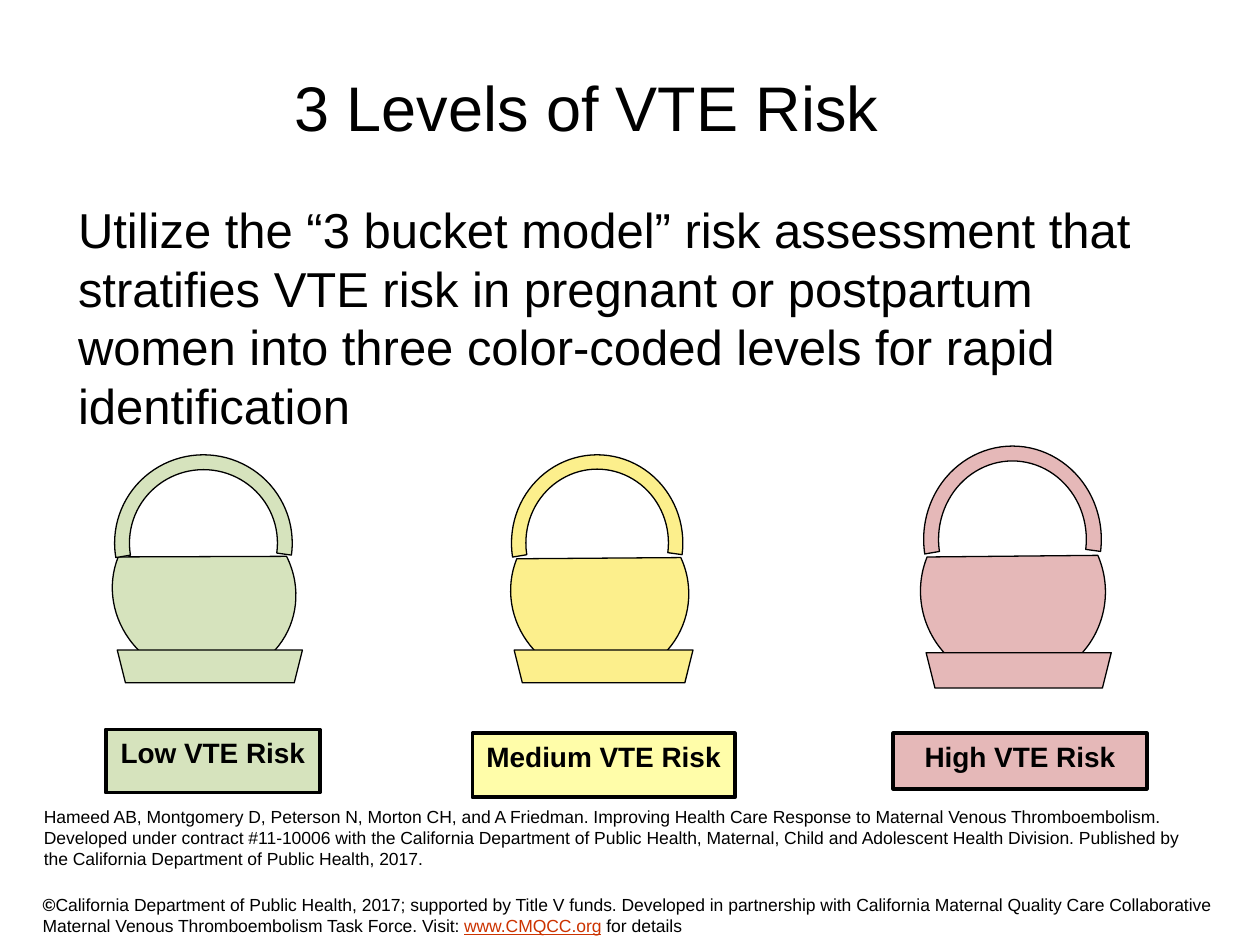
from lxml.etree import SubElement
from pptx import Presentation
from pptx.dml.color import RGBColor
from pptx.enum.shapes import MSO_SHAPE
from pptx.enum.text import MSO_ANCHOR, MSO_AUTO_SIZE, PP_ALIGN
from pptx.oxml.ns import qn
from pptx.util import Pt

COLORS = {
    "text": "000000",
    "link": "CC3300",
    "low": "D6E3BD",
    "medium": "FCEF8C",
    "medium_label": "FFFDA9",
    "high": "E5B8B8",
}
HANDLE_ADJUSTMENTS = (102.323, 4.698, 0.084)

# Each place is left, top, width, height in points.
RISK_LEVELS = [
    {"name": "Low VTE Risk", "color": "low", "label_color": "low",
     "bowl": (67, 285.1, 99.4, 105.8), "handle": (65.5, 259.9, 101.5, 100.8),
     "base": (67, 371.5, 105.8, 18.7), "label": (60.5, 416.9, 122.4, 36)},
    {"name": "Medium VTE Risk", "color": "medium", "label_color": "medium_label",
     "bowl": (293, 287.3, 99.4, 102.2), "handle": (292.3, 259.9, 97.9, 100.8),
     "base": (293.8, 371.5, 102.2, 18.7), "label": (270, 419, 149.8, 36.7)},
    {"name": "High VTE Risk", "color": "high", "label_color": "high",
     "bowl": (526.3, 285.1, 105.1, 105.8), "handle": (527.8, 254.9, 101.5, 106.6),
     "base": (529.2, 373, 105.8, 20.2), "label": (510.5, 419, 144.7, 31.7)},
]

CITATION = (
    "Hameed AB, Montgomery D, Peterson N, Morton CH, and A Friedman. Improving Health Care "
    "Response to Maternal Venous Thromboembolism. Developed under contract #11-10006 with the "
    "California Department of Public Health, Maternal, Child and Adolescent Health Division. "
    "Published by the California Department of Public Health, 2017."
)
COPYRIGHT = (
    "California Department of Public Health, 2017; supported by Title V funds. Developed in "
    "partnership with California Maternal Quality Care Collaborative Maternal Venous "
    "Thromboembolism Task Force. Visit: "
)
STATEMENT = (
    "Utilize the “3 bucket model” risk assessment that stratifies VTE risk in pregnant or "
    "postpartum women into three color-coded levels for rapid identification"
)


def rgb(name):
    return RGBColor.from_string(COLORS[name])


def add_span(para, text, size, color="text", bold=False, underline=False):
    span = para.add_run()
    span.text = text
    font = span.font
    font.name, font.size = "Arial", Pt(size)
    font.bold, font.underline = bold, underline
    font.color.rgb = rgb(color)


def fill_placeholder(holder, place, text, size, align, anchor):
    holder.left, holder.top, holder.width, holder.height = map(Pt, place)
    frame = holder.text_frame
    frame.auto_size = MSO_AUTO_SIZE.NONE
    frame.vertical_anchor = anchor
    para = frame.paragraphs[0]
    para.alignment = align
    para.space_before = Pt(0)
    add_span(para, text, size)
    return para


def remove_bullet(para):
    properties = para._p.get_or_add_pPr()
    properties.set("marL", "0")
    properties.set("indent", "0")
    SubElement(properties, qn("a:buNone"))


def add_note(page, place, spans):
    """Add a small wrapped text box; spans are (text, format) pairs."""
    box = page.shapes.add_textbox(*map(Pt, place))
    box.text_frame.word_wrap = True
    para = box.text_frame.paragraphs[0]
    for text, style in spans:
        add_span(para, text, 10, **style)


def add_outlined_shape(shapes, kind, place, color, line_width, rotation=0):
    shape = shapes.add_shape(kind, *map(Pt, place))
    shape.rotation = rotation
    shape.shadow.inherit = False
    shape.fill.solid()
    shape.fill.fore_color.rgb = rgb(color)
    shape.line.color.rgb = rgb("text")
    shape.line.width = Pt(line_width)
    return shape


def add_bucket(page, level):
    parts = page.shapes.add_group_shape().shapes
    color = level["color"]
    add_outlined_shape(parts, MSO_SHAPE.CHORD, level["bowl"], color, 0.75, 291.9)
    handle = add_outlined_shape(parts, MSO_SHAPE.BLOCK_ARC, level["handle"], color, 0.75)
    for index, value in enumerate(HANDLE_ADJUSTMENTS):
        handle.adjustments[index] = value
    add_outlined_shape(parts, MSO_SHAPE.TRAPEZOID, level["base"], color, 0.75, 180)


def add_label(page, level):
    label = add_outlined_shape(
        page.shapes, MSO_SHAPE.RECTANGLE, level["label"], level["label_color"], 2.25)
    frame = label.text_frame
    frame.word_wrap = False
    frame.vertical_anchor = MSO_ANCHOR.TOP
    para = frame.paragraphs[0]
    para.alignment = PP_ALIGN.CENTER
    add_span(para, level["name"], 16, bold=True)


def main():
    deck = Presentation()
    deck.slide_width, deck.slide_height = Pt(720), Pt(540)
    page = deck.slides.add_slide(deck.slide_layouts[1])

    fill_placeholder(page.shapes.title, (95, 24.5, 480.2, 72), "3 Levels of VTE Risk",
                     36, PP_ALIGN.CENTER, MSO_ANCHOR.MIDDLE)
    statement = fill_placeholder(page.placeholders[1], (37.4, 110.2, 647.3, 75.6), STATEMENT,
                                 28, PP_ALIGN.LEFT, MSO_ANCHOR.TOP)
    remove_bullet(statement)

    for level in RISK_LEVELS:
        add_bucket(page, level)
        add_label(page, level)

    add_note(page, (18, 457.2, 671.8, 43.9), [(CITATION, {})])
    add_note(page, (17.3, 507.6, 685.4, 31.7), [
        ("©", {"bold": True}),
        (COPYRIGHT, {}),
        ("www.CMQCC.org", {"color": "link", "underline": True}),
        (" for details", {}),
    ])
    deck.save("out.pptx")


if __name__ == "__main__":
    main()
